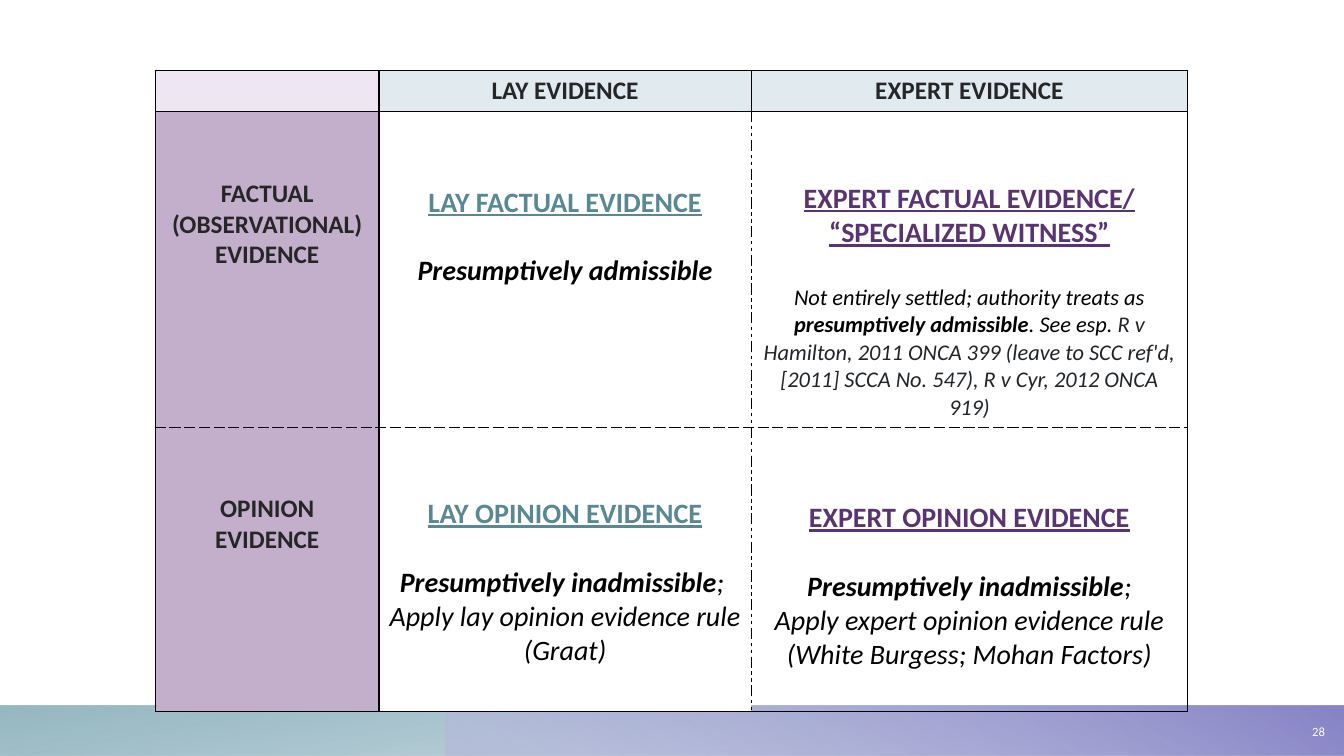
from dataclasses import dataclass

from lxml.etree import SubElement
from pptx import Presentation
from pptx.dml.color import RGBColor
from pptx.enum.shapes import MSO_SHAPE as Shape
from pptx.enum.text import MSO_ANCHOR as Anchor, PP_ALIGN as Align
from pptx.oxml.ns import qn
from pptx.util import Inches, Pt


@dataclass(frozen=True)
class Theme:
    font: str = "Calibri"
    number: float = 9
    note: float = 16
    label: float = 18
    title: float = 20
    gap: float = 24.4
    black: str = "000000"
    white: str = "FFFFFF"
    ink: str = "262626"
    citation: str = "212529"
    teal: str = "588894"
    purple: str = "5A3471"
    corner: str = "EFE6F4"
    header: str = "E1EAEF"
    side: str = "C3AFCC"


THEME = Theme()


@dataclass(frozen=True)
class Span:
    text: str
    size: float = THEME.title
    color: str = THEME.black
    bold: bool = False
    italic: bool = True
    underline: bool = False


@dataclass(frozen=True)
class Line:
    spans: tuple
    gap: float = 0


@dataclass(frozen=True)
class Entry:
    lines: tuple = ()
    fill: str | None = THEME.white
    top: float = 0.05


def label(text):
    return Line((Span(text, THEME.label, THEME.ink, bold=True, italic=False),))


def title(text, color):
    return Line((Span(text, color=color, bold=True, italic=False, underline=True),))


def ruling(text, ending=""):
    spans = (Span(text, bold=True),) + ((Span(ending),) if ending else ())
    return Line(spans, THEME.gap)


def rule(text):
    return Line((Span(text),))


class Builder:
    def __init__(self, theme, slide):
        self.theme = theme
        self.slide = slide

    def band(self, left, width, stops, angle, rotation=0):
        """Draw a footer band; each stop is position %, colour, opacity %."""
        box = self.slide.shapes.add_shape(
            Shape.RECTANGLE, Inches(left), Inches(7), Inches(width), Inches(0.5))
        box.shadow.inherit = False
        box.line.fill.background()
        box.rotation = rotation
        box.fill.gradient()
        properties = box.element.spPr
        properties.find(qn("a:xfrm")).set("flipH", "1")
        gradient = properties.find(qn("a:gradFill"))
        gradient.clear()
        gradient.set("rotWithShape", "1")
        stop_list = SubElement(gradient, qn("a:gsLst"))
        for position, color, opacity in stops:
            stop = SubElement(stop_list, qn("a:gs"), pos=str(position * 1000))
            tone = SubElement(stop, qn("a:srgbClr"), val=color)
            SubElement(tone, qn("a:alpha"), val=str(opacity * 1000))
        SubElement(gradient, qn("a:lin"), ang=str(angle * 60000), scaled="0")

    def add_line(self, para, line, align):
        para.alignment = align
        para.space_before = Pt(line.gap)
        for span in line.spans:
            for index, text in enumerate(span.text.split("\n")):
                if index:
                    para.add_line_break()
                run = para.add_run()
                run.text = text
                font = run.font
                font.name = self.theme.font
                font.size = Pt(span.size)
                font.color.rgb = RGBColor.from_string(span.color)
                font.bold, font.italic = span.bold, span.italic
                font.underline = span.underline

    def page_number(self, text):
        box = self.slide.shapes.add_textbox(
            Inches(12.76), Inches(7.01), Inches(0.48), Inches(0.49))
        frame = box.text_frame
        frame.word_wrap = True
        frame.vertical_anchor = Anchor.MIDDLE
        span = Span(text, self.theme.number, self.theme.white, italic=False)
        self.add_line(frame.paragraphs[0], Line((span,)), Align.RIGHT)

    def borders(self, cell, dashes):
        properties = cell._tc.get_or_add_tcPr()
        for side in "LRTB":
            edge = SubElement(properties, qn(f"a:ln{side}"), w=str(Pt(1)))
            paint = SubElement(edge, qn("a:solidFill"))
            SubElement(paint, qn("a:srgbClr"), val=self.theme.black)
            SubElement(edge, qn("a:prstDash"), val=dashes.get(side, "solid"))

    def cell(self, cell, entry, dashes):
        self.borders(cell, dashes)
        if entry.fill:
            cell.fill.solid()
            cell.fill.fore_color.rgb = RGBColor.from_string(entry.fill)
        else:
            cell.fill.background()
        cell.margin_top = Inches(entry.top)
        frame = cell.text_frame
        for index, line in enumerate(entry.lines):
            para = frame.add_paragraph() if index else frame.paragraphs[0]
            self.add_line(para, line, Align.CENTER)

    def table(self, left, top, widths, heights, entries):
        """Draw the grid, with dashed lines between the four evidence types."""
        table = self.slide.shapes.add_table(
            len(heights), len(widths), Inches(left), Inches(top),
            Inches(sum(widths)), Inches(sum(heights))).table
        table.first_row = table.horz_banding = False
        for column, width in zip(table.columns, widths):
            column.width = Inches(width)
        for row, height in zip(table.rows, heights):
            row.height = Inches(height)
        for r, row in enumerate(entries):
            for c, entry in enumerate(row):
                dashes = {}
                if r:
                    dashes["B" if r == 1 else "T"] = "dash"
                    if c:
                        dashes["R" if c == 1 else "L"] = "sysDashDotDot"
                self.cell(table.cell(r, c), entry, dashes)


HEADER = [
    Entry(fill=THEME.corner),
    Entry((label("LAY EVIDENCE"),), THEME.header),
    Entry((label("EXPERT EVIDENCE"),), THEME.header),
]
SETTLED = Line((
    Span("Not entirely settled; authority treats as ", THEME.note),
    Span("presumptively admissible", THEME.note, bold=True),
    Span(". See esp. ", THEME.note),
    Span("R v Hamilton, 2011 ONCA 399 (leave to SCC ref'd, [2011] SCCA No. 547), "
         "R v Cyr, 2012 ONCA 919)", THEME.note, THEME.citation),
), THEME.gap)
FACTUAL = [
    Entry((label("FACTUAL"), label("(OBSERVATIONAL)\nEVIDENCE")), THEME.side, 0.66),
    Entry((title("LAY FACTUAL EVIDENCE", THEME.teal),
           ruling("Presumptively admissible")), top=0.73),
    Entry((title("EXPERT FACTUAL EVIDENCE/", THEME.purple),
           title("“SPECIALIZED WITNESS”", THEME.purple), SETTLED), top=0.69),
]
OPINION = [
    Entry((label("OPINION EVIDENCE"),), THEME.side, 0.66),
    Entry((title("LAY OPINION EVIDENCE", THEME.teal),
           ruling("Presumptively inadmissible", "; "),
           rule("Apply lay opinion evidence rule (Graat)")), top=0.69),
    Entry((title("EXPERT OPINION EVIDENCE", THEME.purple),
           ruling("Presumptively inadmissible", ";"),
           rule("Apply expert opinion evidence rule (White Burgess; Mohan Factors)")),
          None, 0.73),
]


def main():
    deck = Presentation()
    deck.slide_width, deck.slide_height = Inches(13.33), Inches(7.5)
    page = Builder(THEME, deck.slides.add_slide(deck.slide_layouts[6]))
    page.band(0, 13.33, [(14, "6997AF", 28), (100, "84ACB6", 85)], 100, 180)
    page.band(4.42, 8.92, [(9, "B7B5DD", 55), (99, "8784C7", 100)], 240)
    page.page_number("28")
    page.table(1.54, 0.7, (2.22, 3.69, 4.33), (0.41, 3.13, 2.82),
               [HEADER, FACTUAL, OPINION])
    deck.save("out.pptx")


if __name__ == "__main__":
    main()
